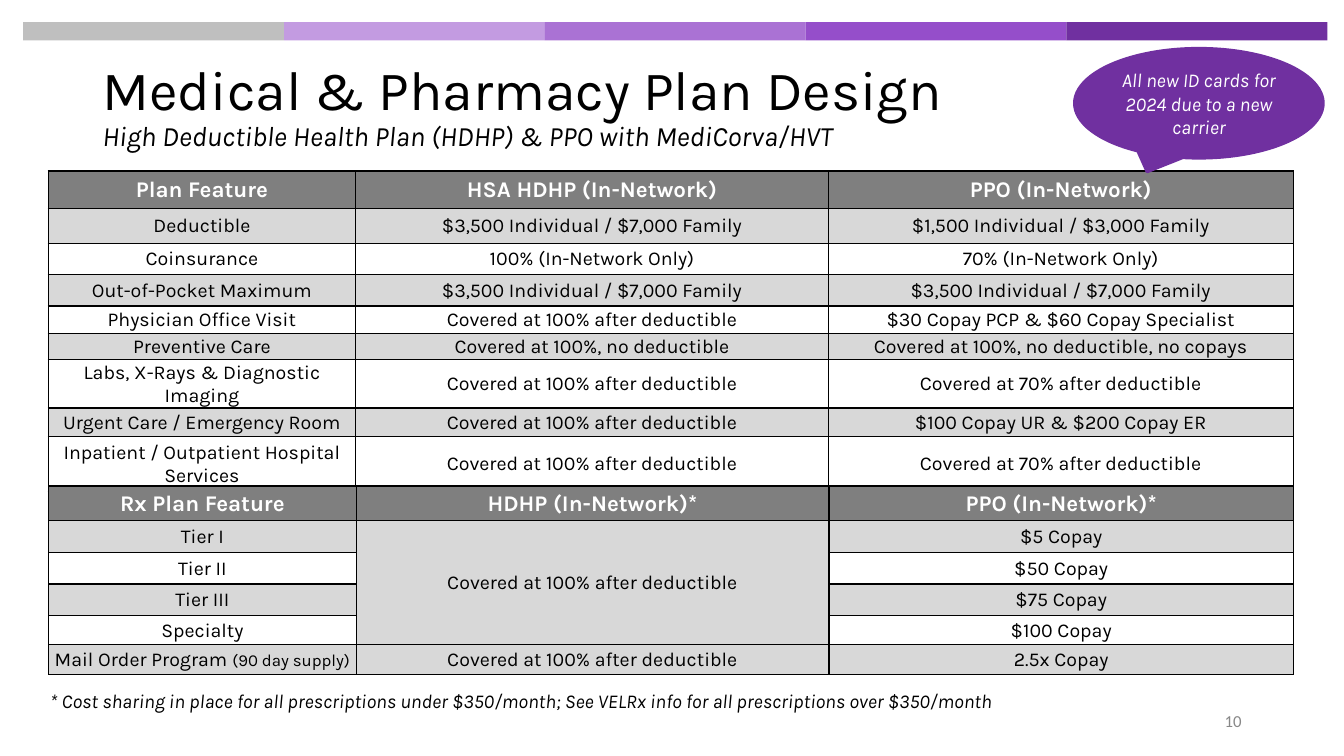
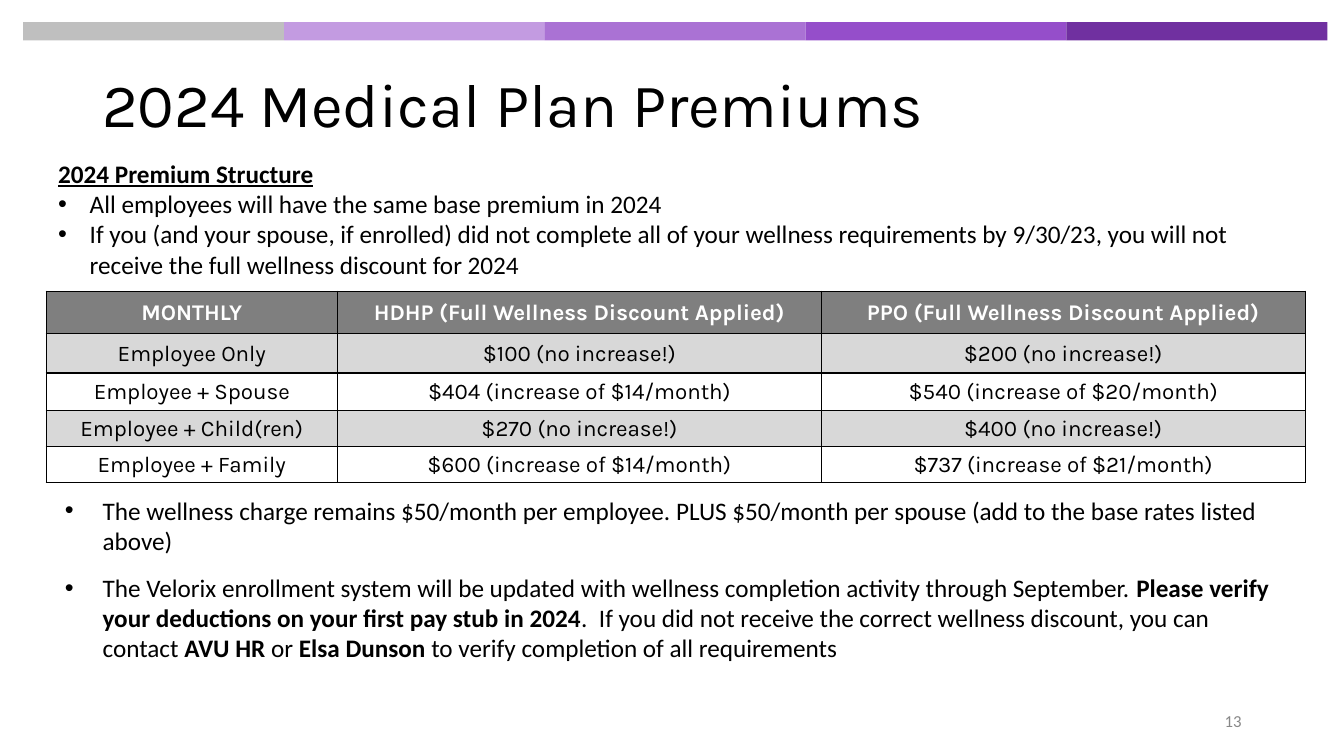
from lxml.etree import SubElement
from pptx import Presentation
from pptx.dml.color import RGBColor
from pptx.enum.shapes import MSO_SHAPE as Shape
from pptx.enum.text import MSO_ANCHOR as Anchor, PP_ALIGN as Align
from pptx.oxml.ns import qn
from pptx.util import Pt

# Shared colours and text styles
rgb = RGBColor.from_string
PURPLE, WHITE, BLACK = "7030A0", "FFFFFF", "000000"
HEADER_GREY, ROW_GREY = "7F7F7F", "D8D8D8"
BAND_COLOURS = ["BFBFBF", "C39BE1", "AA72D4", "954ECA", PURPLE]

KARLA = {"name": "Karla", "color": BLACK, "bold": False}
BODY = {"name": "Calibri", "color": BLACK, "size": Pt(18)}
NUMBER = {"name": "Calibri", "color": "888888", "size": Pt(12)}
NOTE = {**KARLA, "size": Pt(14), "italic": True}
HEADER = {**KARLA, "size": Pt(16), "color": WHITE, "bold": True}
BOLD = {"bold": True}


def write(frame, paragraphs, style, **layout):
    """Fill a frame; a paragraph is a list of (text, changed format) runs."""
    frame.word_wrap = True
    for index, runs in enumerate(paragraphs):
        paragraph = frame.paragraphs[0] if index == 0 else frame.add_paragraph()
        for key, value in layout.items():
            setattr(paragraph, key, value)
        for text, changes in runs:
            run = paragraph.add_run()
            run.text = text
            for key, value in {**style, **changes}.items():
                if key == "color":
                    run.font.color.rgb = rgb(value)
                else:
                    setattr(run.font, key, value)


def add_text(slide, box, paragraphs, style, anchor=Anchor.TOP, **layout):
    """Add a text box at box = (left, top, width, height) in points."""
    frame = slide.shapes.add_textbox(*map(Pt, box)).text_frame
    frame.vertical_anchor = anchor
    write(frame, paragraphs, style, **layout)
    return frame


# Slide contents
COVERED = "Covered at 100% after deductible"
FAMILY_MAXIMUM = "$3,500 Individual / $7,000 Family"
PLAN_WIDTHS = [219.6, 337.7, 331.9]

medical_table = {
    "left": 34.5, "top": 122.2, "widths": PLAN_WIDTHS, "size": 14,
    "heights": [26.5, 25, 22.5, 22.5, 19.5, 19, 33.5, 20.5, 39],
    "rows": [
        ["Plan Feature", "HSA HDHP (In-Network)", "PPO (In-Network)"],
        ["Deductible", FAMILY_MAXIMUM, "$1,500 Individual / $3,000 Family"],
        ["Coinsurance", "100% (In-Network Only)", "70% (In-Network Only)"],
        ["Out-of-Pocket Maximum", FAMILY_MAXIMUM, FAMILY_MAXIMUM],
        ["Physician Office Visit", COVERED, "$30 Copay PCP & $60 Copay Specialist"],
        ["Preventive Care", "Covered at 100%, no deductible",
         "Covered at 100%, no deductible, no copays"],
        ["Labs, X-Rays & Diagnostic Imaging", COVERED, "Covered at 70% after deductible"],
        ["Urgent Care / Emergency Room", COVERED, "$100 Copay UR & $200 Copay ER"],
        ["Inpatient / Outpatient Hospital Services", COVERED,
         "Covered at 70% after deductible"],
    ],
}
pharmacy_table = {
    "left": 34.8, "top": 347.2, "widths": PLAN_WIDTHS, "size": 14,
    "heights": [24.5, 23, 22.5, 22.5, 21, 21],
    "merge": [(1, 1), (4, 1)],
    "rows": [
        ["Rx Plan Feature", "HDHP (In-Network)*", "PPO (In-Network)*"],
        ["Tier I", COVERED, "$5 Copay"],
        ["Tier II", "", "$50 Copay"],
        ["Tier III", "", "$75 Copay"],
        ["Specialty", "", "$100 Copay"],
        ["Mail Order Program |(90 day supply)", COVERED, "2.5x Copay"],
    ],
}
premium_table = {
    "left": 33, "top": 208, "widths": [208.1, 345.6, 345.6], "size": 16,
    "heights": [30.5, 28, 27, 25.7, 25.7],
    "rows": [
        ["MONTHLY", "HDHP (Full Wellness Discount Applied)",
         "PPO (Full Wellness Discount Applied)"],
        ["Employee Only", "$100 (no increase!)", "$200 (no increase!)"],
        ["Employee + Spouse", "$404 (increase of $14/month)",
         "$540 (increase of $20/month)"],
        ["Employee + Child(ren)", "$270 (no increase!)", "$400 (no increase!)"],
        ["Employee + Family", "$600 (increase of $14/month)",
         "$737 (increase of $21/month)"],
    ],
}
pages = [
    {"number": "10", "tables": [medical_table, pharmacy_table],
     "title": [
         [("Medical & Pharmacy Plan Design", {"size": Pt(39.6)})],
         [("High Deductible Health Plan (HDHP) & PPO with MediCorva/HVT",
           {"size": Pt(20), "italic": True})]]},
    {"number": "13", "tables": [premium_table],
     "title": [[("2024 Medical Plan Premiums", {"size": Pt(44)})]]},
]

presentation = Presentation()
presentation.slide_width, presentation.slide_height = Pt(960), Pt(540)
slides = []

for page in pages:
    slide = presentation.slides.add_slide(presentation.slide_layouts[6])
    slides.append(slide)

    # Title and page number
    add_text(slide, (66, 34.5, 828, 85), page["title"], KARLA,
             Anchor.MIDDLE, line_spacing=0.9)
    add_text(slide, (678, 500.5, 216, 28.8), [[(page["number"], {})]], NUMBER,
             Anchor.MIDDLE, alignment=Align.RIGHT)

    # Colour band across the top
    band_width = 186.3
    for index, colour in enumerate(BAND_COLOURS):
        band = slide.shapes.add_shape(
            Shape.RECTANGLE, Pt(16.6 + index * band_width), Pt(15.8),
            Pt(band_width), Pt(13))
        band.shadow.inherit = False
        band.fill.solid()
        band.fill.fore_color.rgb = rgb(colour)
        band.line.fill.background()

    # Tables with black borders and alternating rows
    for data in page["tables"]:
        widths, heights, rows = data["widths"], data["heights"], data["rows"]
        table = slide.shapes.add_table(
            len(rows), len(widths), Pt(data["left"]), Pt(data["top"]),
            Pt(sum(widths)), Pt(sum(heights))).table
        for column, width in zip(table.columns, widths):
            column.width = Pt(width)
        cell_format = {
            "vertical_anchor": Anchor.MIDDLE, "margin_left": Pt(0.7),
            "margin_right": Pt(0.7), "margin_top": Pt(0.7), "margin_bottom": Pt(0)}
        for row_index, texts in enumerate(rows):
            table.rows[row_index].height = Pt(heights[row_index])
            if row_index == 0:
                style, fill = HEADER, HEADER_GREY
            else:
                style = {**KARLA, "size": Pt(data["size"])}
                fill = ROW_GREY if row_index % 2 else WHITE
            for column_index, text in enumerate(texts):
                cell = table.cell(row_index, column_index)
                for key, value in cell_format.items():
                    setattr(cell, key, value)
                properties = cell._tc.get_or_add_tcPr()
                for side in ("a:lnL", "a:lnR", "a:lnT", "a:lnB"):
                    border = SubElement(properties, qn(side), w=str(Pt(1)))
                    border_fill = SubElement(border, qn("a:solidFill"))
                    SubElement(border_fill, qn("a:srgbClr"), val=BLACK)
                cell.fill.solid()
                cell.fill.fore_color.rgb = rgb(fill)
                if text:
                    main, _, small = text.partition("|")
                    runs = [(main, {})]
                    if small:
                        runs.append((small, {"size": Pt(12)}))
                    write(cell.text_frame, [runs], style, alignment=Align.CENTER)
        if "merge" in data:
            first, last = data["merge"]
            table.cell(*first).merge(table.cell(*last))

plan_slide, premium_slide = slides

# Plan design: footnote and callout
add_text(plan_slide, (28.8, 488.2, 733.7, 24.5),
         [[("* Cost sharing in place for all prescriptions under $350/month; "
            "See VELRx info for all prescriptions over $350/month", {})]], NOTE)

callout = plan_slide.shapes.add_shape(
    Shape.OVAL_CALLOUT, Pt(767.5, ), Pt(34.5), Pt(177.8), Pt(78.5))
callout.shadow.inherit = False
callout.fill.solid()
callout.fill.fore_color.rgb = rgb(PURPLE)
callout.line.color.rgb = rgb(PURPLE)
callout.line.width = Pt(2)
callout.text_frame.vertical_anchor = Anchor.MIDDLE
write(callout.text_frame,
      [[("All new ID cards for 2024 due to a new carrier", {})]],
      {**NOTE, "color": WHITE}, alignment=Align.CENTER)

# Premiums: text above and below the table
structure = add_text(premium_slide, (34.5, 109.4, 899.3, 73.4), [
    [("2024 Premium Structure", {"bold": True, "underline": True})],
    [("All employees will have the same base premium in 2024", {})],
    [("If you (and your spouse, if enrolled) did not complete all of your "
      "wellness requirements by 9/30/23, you will not receive the full "
      "wellness discount for 2024", {})],
], BODY)
charges = add_text(premium_slide, (30.2, 350, 899.3, 155.5), [
    [("The wellness charge remains $50/month per employee. PLUS $50/month "
      "per spouse (add to the base rates listed above)", {})],
    [("The Velorix enrollment system will be updated with wellness completion "
      "activity through September. ", {}),
     ("Please verify your deductions on your first pay stub in 2024", BOLD),
     (".  If you did not receive the correct wellness discount, you can contact ", {}),
     ("AVU HR ", BOLD), ("or ", {}), ("Elsa Dunson ", BOLD),
     ("to verify completion of all requirements", {})],
], BODY)
charges.paragraphs[1].space_before = Pt(12)

# Bullets: paragraphs, left margin, hanging indent
for paragraphs, margin, hanging in [
        (structure.paragraphs[1:], 22.5, 22.5), (charges.paragraphs, 36, 27)]:
    for paragraph in paragraphs:
        properties = paragraph._p.get_or_add_pPr()
        properties.set("marL", str(Pt(margin)))
        properties.set("indent", str(-Pt(hanging)))
        SubElement(properties, qn("a:buFont"), typeface="Arial")
        SubElement(properties, qn("a:buChar"), char="•")

presentation.save("out.pptx")
